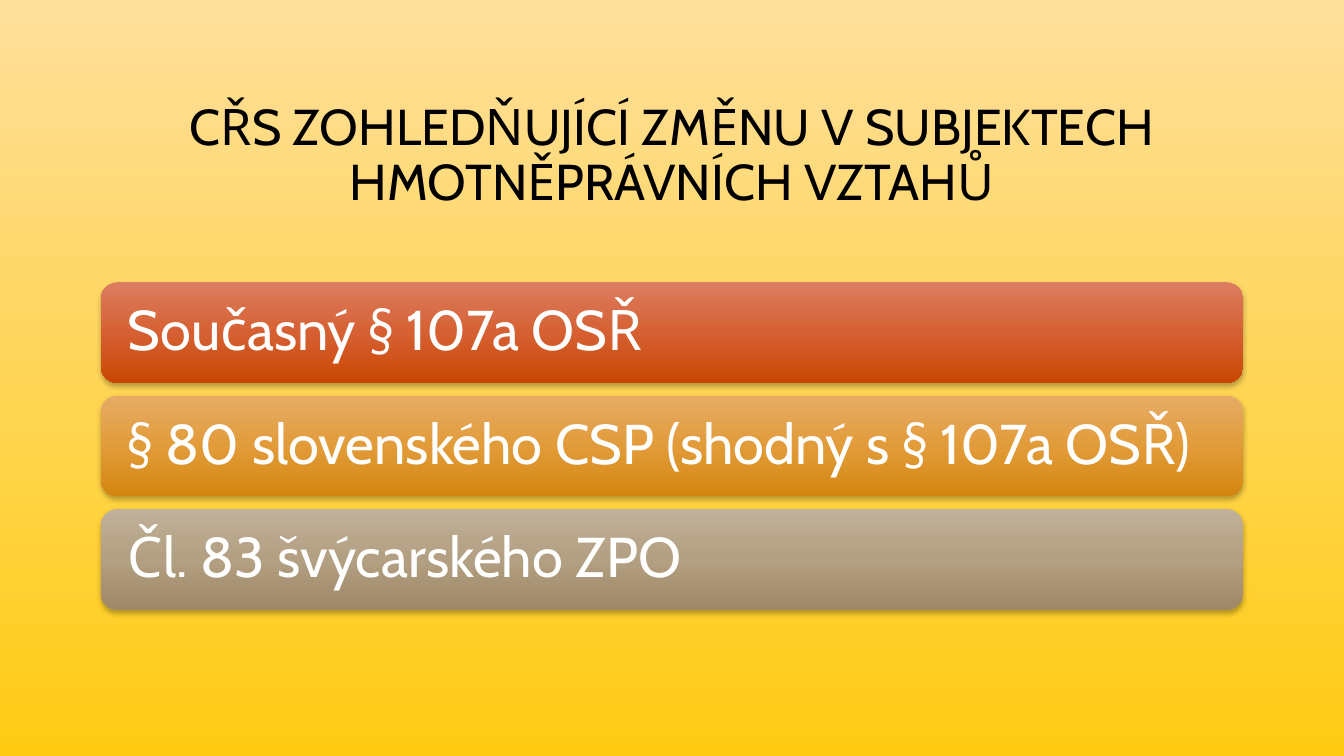
"""Build a slide listing three legal provisions on a change of parties."""
from copy import deepcopy

from lxml.etree import fromstring
from pptx import Presentation
from pptx.dml.color import RGBColor
from pptx.enum.shapes import MSO_SHAPE as Shape
from pptx.enum.text import MSO_ANCHOR as Anchor, PP_ALIGN as Align
from pptx.util import Pt

FONT = "Cabin"
BLACK = RGBColor(0x00, 0x00, 0x00)
WHITE = RGBColor(0xFF, 0xFF, 0xFF)
BACKGROUND = [RGBColor(0xFF, 0xDF, 0x9B), RGBColor(0xFF, 0xCC, 0x13)]
RED = [RGBColor(0xDC, 0x7D, 0x60), RGBColor(0xD6, 0x60, 0x32), RGBColor(0xC9, 0x47, 0x03)]
ORANGE = [RGBColor(0xE6, 0xAC, 0x66), RGBColor(0xE2, 0x9B, 0x39), RGBColor(0xD3, 0x87, 0x10)]
TAUPE = [RGBColor(0xC1, 0xB1, 0x9A), RGBColor(0xB3, 0x9F, 0x81), RGBColor(0x9E, 0x88, 0x68)]

LEFT, WIDTH = 72, 816
BAR_TOP, BAR_HEIGHT, BAR_PITCH = 201.6, 72, 81
BAR_INSET = 15.84

SHADOW = (
    '<a:outerShdw xmlns:a="http://schemas.openxmlformats.org/drawingml/2006/main" '
    'blurRad="50800" dist="25400" dir="5400000" rotWithShape="0">'
    '<a:srgbClr val="000000"><a:alpha val="28000"/></a:srgbClr></a:outerShdw>'
)


def fill_downwards(fill, element, colors):
    fill.gradient()
    fill.gradient_angle = 270
    stop_list = element.xpath(".//a:gsLst")[0]
    while len(stop_list) < len(colors):
        stop_list.insert(1, deepcopy(stop_list[0]))
    for index, (stop, color) in enumerate(zip(fill.gradient_stops, colors)):
        stop.position = index / (len(colors) - 1)
        stop.color.rgb = color


def style_text(paragraph, size, color, align):
    paragraph.alignment = align
    paragraph.line_spacing = 0.9
    paragraph.font.name = FONT
    paragraph.font.size = Pt(size)
    paragraph.font.color.rgb = color


presentation = Presentation()
presentation.slide_width = Pt(960)
presentation.slide_height = Pt(540)
slide = presentation.slides.add_slide(presentation.slide_layouts[5])
fill_downwards(slide.background.fill, slide.element, BACKGROUND)

title = slide.shapes.title
title.left, title.top, title.width, title.height = Pt(LEFT), Pt(49), Pt(WIDTH), Pt(126)
title.text_frame.text = "CŘS ZOHLEDŇUJÍCÍ ZMĚNU V SUBJEKTECH HMOTNĚPRÁVNÍCH VZTAHŮ"
title.text_frame.vertical_anchor = Anchor.MIDDLE
style_text(title.text_frame.paragraphs[0], 36, BLACK, Align.CENTER)

provisions = [
    ("Současný § 107a OSŘ", RED),
    ("§ 80 slovenského CSP (shodný s § 107a OSŘ)", ORANGE),
    ("Čl. 83 švýcarského ZPO", TAUPE),
]
for row, (provision, colors) in enumerate(provisions):
    bar = slide.shapes.add_shape(
        Shape.ROUNDED_RECTANGLE,
        Pt(LEFT), Pt(BAR_TOP + row * BAR_PITCH), Pt(WIDTH), Pt(BAR_HEIGHT),
    )
    fill_downwards(bar.fill, bar.element, colors)
    bar.line.fill.background()
    bar.shadow.inherit = False
    bar.element.xpath("./p:spPr/a:effectLst")[0].append(fromstring(SHADOW))
    frame = bar.text_frame
    frame.word_wrap = True
    frame.vertical_anchor = Anchor.MIDDLE
    frame.margin_left = frame.margin_right = Pt(BAR_INSET)
    frame.margin_top = frame.margin_bottom = Pt(BAR_INSET)
    frame.text = provision
    style_text(frame.paragraphs[0], 40, WHITE, Align.LEFT)

presentation.save("out.pptx")
